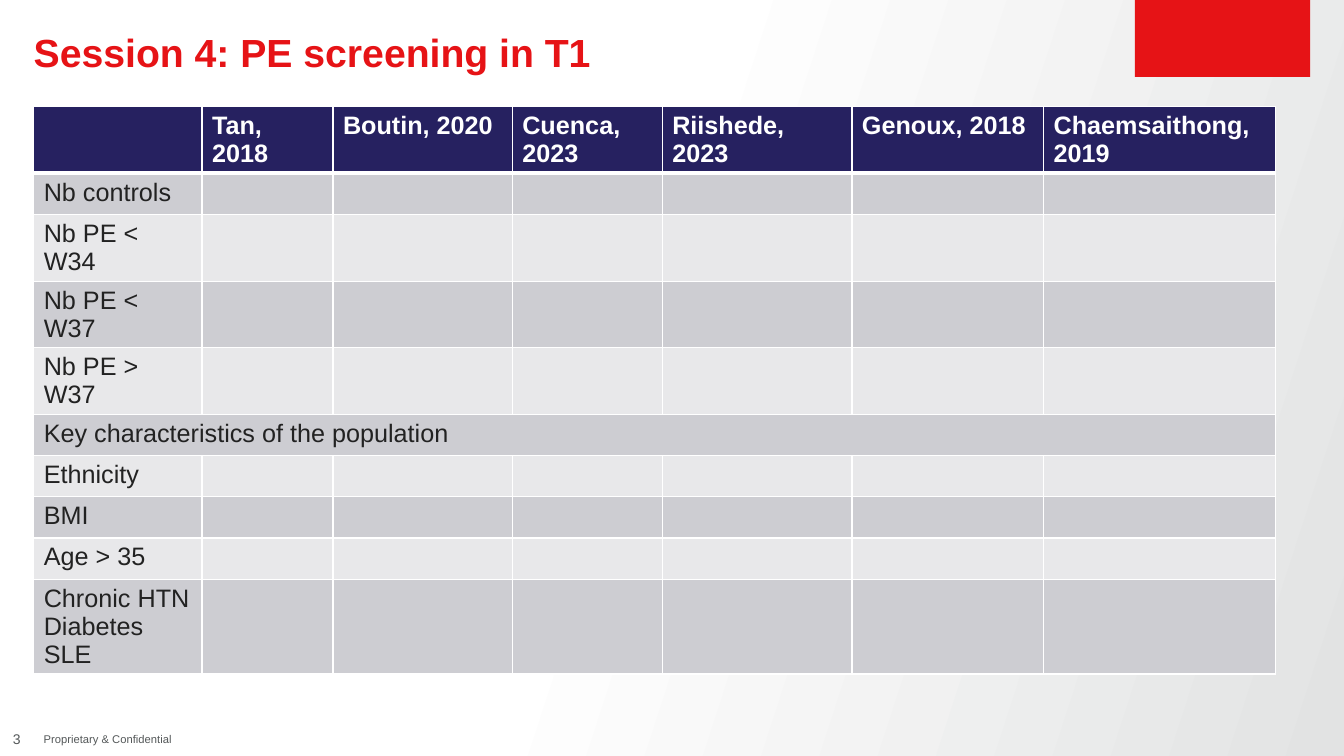
import pptx
import pptx.dml.color
import pptx.enum.shapes
import pptx.enum.text
import pptx.oxml
import pptx.oxml.ns
import pptx.util
from pptx.util import Cm

# Content
TITLE = "Session 4: PE screening in T1"
PAGE_NUMBER = "3"
FOOTER = "Proprietary & Confidential"
STUDIES = ["", "Tan, 2018", "Boutin, 2020", "Cuenca, 2023", "Riishede, 2023",
           "Genoux, 2018", "Chaemsaithong,\n2019"]
SECTION = "Key characteristics of the population"
ROW_LABELS = ["Nb controls", "Nb PE < W34", "Nb PE < W37", "Nb PE > W37", SECTION,
              "Ethnicity", "BMI", "Age > 35", "Chronic HTN\nDiabetes\nSLE"]

# Layout
LEFT = Cm(0.85)
COLUMN_WIDTHS = [Cm(width) for width in (4.24, 3.3, 4.52, 3.78, 4.78, 4.83, 5.84)]
ROW_HEIGHT = Cm(1.04)
FOOTER_TOP, FOOTER_HEIGHT = Cm(18.2), Cm(0.85)


class Theme:
    red, navy, white = "E61316", "262160", "FFFFFF"
    text, muted = "222222", "545859"
    bands = ("CDCDD2", "E8E8EA")
    background = ((0.45, "FFFFFF"), (1.0, "E2E3E3"))
    background_angle = 342
    font = "Arial"
    title_size, table_size, number_size, footer_size = 28, 18, 10, 8
    border, header_border = 1, 3


def rgb(value):
    return pptx.dml.color.RGBColor.from_string(value)


def apply(target, values):
    for name, value in values.items():
        setattr(target, name, value)


def write(text_frame, text, size, color, bold=False, **paragraph_values):
    text_frame.text = text
    for paragraph in text_frame.paragraphs:
        apply(paragraph, paragraph_values)
        apply(paragraph.font, {"name": Theme.font, "size": pptx.util.Pt(size), "bold": bold})
        paragraph.font.color.rgb = rgb(color)


def set_borders(cell, top, bottom):
    properties = cell._tc.get_or_add_tcPr()
    widths = {"lnL": Theme.border, "lnR": Theme.border, "lnT": top, "lnB": bottom}
    for side, width in widths.items():
        properties.append(pptx.oxml.parse_xml(
            f'<a:{side} {pptx.oxml.ns.nsdecls("a")} w="{pptx.util.Pt(width)}">'
            f'<a:solidFill><a:srgbClr val="{Theme.white}"/></a:solidFill></a:{side}>'))


def add_footer_text(slide, left, width, text, size, alignment, side_margin):
    box = slide.shapes.add_textbox(left, FOOTER_TOP, width, FOOTER_HEIGHT)
    apply(box.text_frame, {
        "word_wrap": True, "vertical_anchor": pptx.enum.text.MSO_ANCHOR.MIDDLE,
        "margin_left": side_margin, "margin_right": side_margin})
    write(box.text_frame, text, size, Theme.muted, alignment=alignment)


def add_study_table(slide):
    rows = [STUDIES] + [[label] + [""] * (len(STUDIES) - 1) for label in ROW_LABELS]
    table = slide.shapes.add_table(
        len(rows), len(STUDIES), LEFT, Cm(2.69),
        sum(COLUMN_WIDTHS), ROW_HEIGHT * len(rows)).table
    for column, width in zip(table.columns, COLUMN_WIDTHS):
        column.width = width
    for row_index, texts in enumerate(rows):
        header = row_index == 0
        table.rows[row_index].height = ROW_HEIGHT
        for column_index, text in enumerate(texts):
            cell = table.cell(row_index, column_index)
            set_borders(cell,
                        Theme.header_border if row_index == 1 else Theme.border,
                        Theme.header_border if header else Theme.border)
            cell.fill.solid()
            cell.fill.fore_color.rgb = rgb(
                Theme.navy if header else Theme.bands[(row_index - 1) % 2])
            write(cell.text_frame, text, Theme.table_size,
                  Theme.white if header else Theme.text, bold=header)
    section_row = ROW_LABELS.index(SECTION) + 1
    table.cell(section_row, 0).merge(table.cell(section_row, len(STUDIES) - 1))


def main():
    presentation = pptx.Presentation()
    apply(presentation, {"slide_width": Cm(33.87), "slide_height": Cm(19.05)})
    slide = presentation.slides.add_slide(presentation.slide_layouts[5])

    # Background
    background = slide.background.fill
    background.gradient()
    background.gradient_angle = Theme.background_angle
    for stop, (position, color) in zip(background.gradient_stops, Theme.background):
        stop.position = position
        stop.color.rgb = rgb(color)

    # Red corner block
    block = slide.shapes.add_shape(
        pptx.enum.shapes.MSO_SHAPE.RECTANGLE, Cm(28.6), 0, Cm(4.42), Cm(1.94))
    block.shadow.inherit = False
    block.fill.solid()
    block.fill.fore_color.rgb = rgb(Theme.red)
    block.line.fill.background()

    # Title
    title = slide.shapes.title
    apply(title, {"left": LEFT, "top": Cm(0.85), "width": Cm(27.1), "height": Cm(1.07)})
    apply(title.text_frame, {
        "margin_left": 0, "margin_right": 0, "margin_top": 0, "margin_bottom": 0,
        "word_wrap": True, "auto_size": pptx.enum.text.MSO_AUTO_SIZE.NONE,
        "vertical_anchor": pptx.enum.text.MSO_ANCHOR.MIDDLE})
    write(title.text_frame, TITLE, Theme.title_size, Theme.red, bold=True,
          alignment=pptx.enum.text.PP_ALIGN.LEFT, line_spacing=0.9)

    # Table and footer
    add_study_table(slide)
    add_footer_text(slide, 0, LEFT, PAGE_NUMBER, Theme.number_size,
                    pptx.enum.text.PP_ALIGN.CENTER, 0)
    add_footer_text(slide, LEFT, Cm(12.47), FOOTER, Theme.footer_size,
                    pptx.enum.text.PP_ALIGN.LEFT, Cm(0.25))

    presentation.save("out.pptx")


if __name__ == "__main__":
    main()
